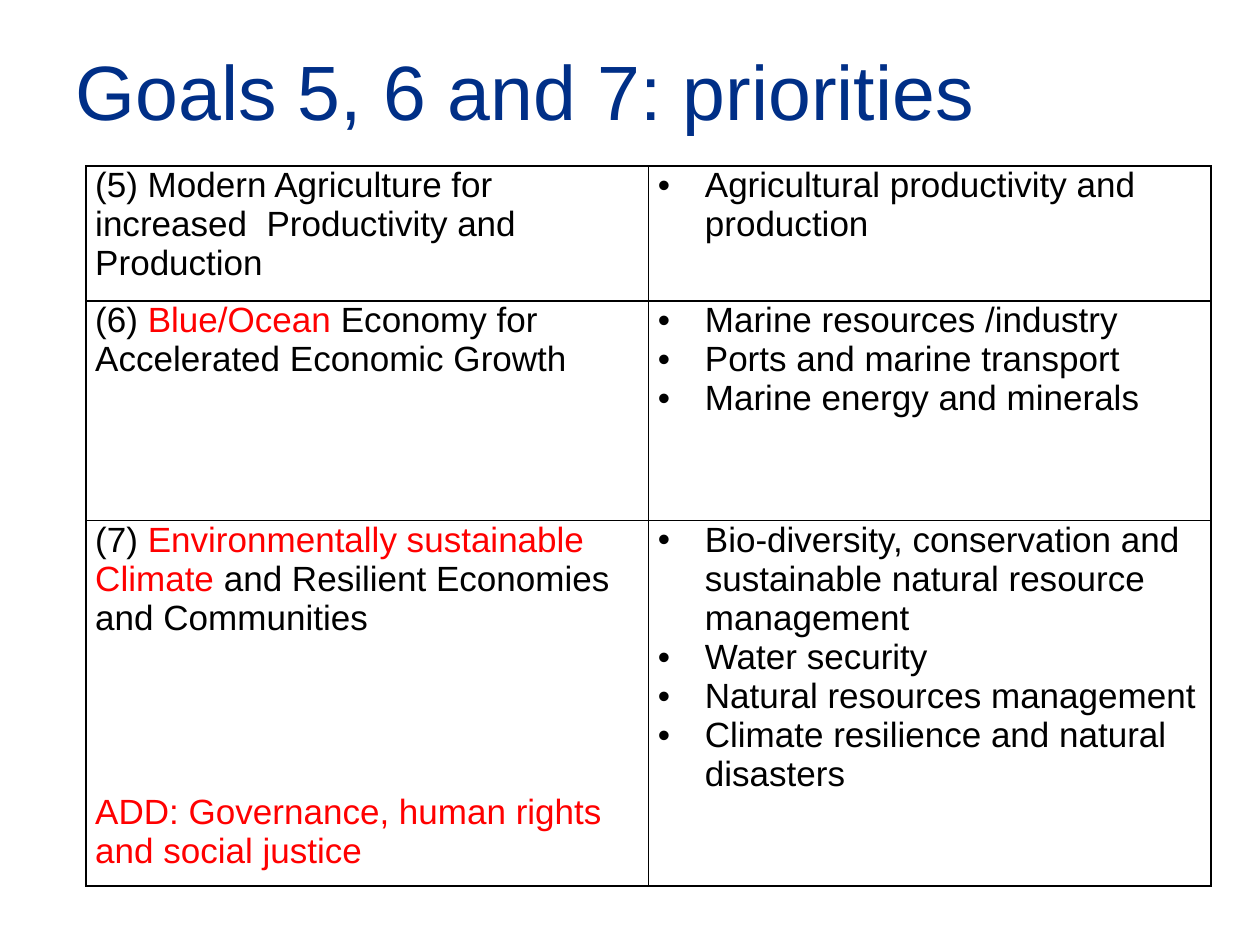
from dataclasses import dataclass

from lxml import etree
from pptx import Presentation
from pptx.dml.color import RGBColor
from pptx.enum.text import MSO_ANCHOR, PP_ALIGN
from pptx.oxml.ns import qn
from pptx.table import _Cell
from pptx.util import Cm, Pt

LEFT = PP_ALIGN.LEFT
MIDDLE = MSO_ANCHOR.MIDDLE
TOP = MSO_ANCHOR.TOP
TITLE_ONLY = 5

COLORS = {"title": "002F87", "text": "000000", "mark": "FF0000", "line": "000000"}
TITLE_BOX = {"left": Cm(1.27), "top": Cm(0.28), "width": Cm(22.86), "height": Cm(3.07)}
CELL = {"margin_left": Cm(0.19), "margin_right": Cm(0.19),
        "margin_top": 0, "margin_bottom": 0, "vertical_anchor": TOP}
INDENT = Cm(0.95)
COL_WIDTH = Cm(11.34)


@dataclass
class Run:
    text: str
    color: str = "text"


@dataclass
class Para:
    runs: list[Run]
    before: float = 0
    bullet: bool = False


@dataclass
class Goal:
    height: float
    paras: list[Para]
    points: list[str]


GOALS = [
    Goal(2.72,
         [Para([Run("(5) Modern Agriculture for increased  Productivity and Production")])],
         ["Agricultural productivity and production"]),
    Goal(4.42,
         [Para([Run("(6) "), Run("Blue/Ocean ", "mark"),
                Run("Economy for Accelerated Economic Growth")])],
         ["Marine resources /industry", "Ports and marine transport",
          "Marine energy and minerals"]),
    Goal(7.37,
         [Para([Run("(7) "), Run("Environmentally sustainable Climate ", "mark"),
                Run("and Resilient Economies and Communities")]),
          Para([Run("ADD: Governance, human rights and social justice", "mark")], before=89)],
         ["Bio-diversity, conservation and sustainable natural resource management",
          "Water security", "Natural resources management",
          "Climate resilience and natural disasters"]),
]


def apply(target: object, values: dict) -> None:
    for name, value in values.items():
        setattr(target, name, value)


def add_run(para, run: Run, size: float) -> None:
    part = para.add_run()
    part.text = run.text
    apply(part.font, {"name": "Arial", "size": Pt(size), "bold": False})
    part.font.color.rgb = RGBColor.from_string(COLORS[run.color])


def add_bullet(para) -> None:
    props = para._p.get_or_add_pPr()
    props.set("marL", str(INDENT))
    props.set("indent", str(-INDENT))
    etree.SubElement(props, qn("a:buFont")).set("typeface", "Arial")
    etree.SubElement(props, qn("a:buChar")).set("char", "•")


def add_border(cell: _Cell) -> None:
    props = cell._tc.get_or_add_tcPr()
    for i, side in enumerate(("lnL", "lnR", "lnT", "lnB")):
        line = etree.Element(qn(f"a:{side}"), w=str(Pt(1)))
        fill = etree.SubElement(line, qn("a:solidFill"))
        etree.SubElement(fill, qn("a:srgbClr")).set("val", COLORS["line"])
        props.insert(i, line)


def fill_cell(cell: _Cell, paras: list[Para]) -> None:
    apply(cell, CELL)
    cell.fill.background()
    add_border(cell)
    frame = cell.text_frame
    for i, item in enumerate(paras):
        para = frame.add_paragraph() if i else frame.paragraphs[0]
        apply(para, {"alignment": LEFT, "space_before": Pt(item.before)})
        if item.bullet:
            add_bullet(para)
        for run in item.runs:
            add_run(para, run, 20)


def main() -> None:
    deck = Presentation()
    apply(deck, {"slide_width": Cm(25.4), "slide_height": Cm(19.05)})
    slide = deck.slides.add_slide(deck.slide_layouts[TITLE_ONLY])

    # Title
    title = slide.shapes.title
    apply(title, TITLE_BOX)
    title.text_frame.vertical_anchor = MIDDLE
    head = title.text_frame.paragraphs[0]
    head.alignment = LEFT
    add_run(head, Run("Goals 5, 6 and 7: priorities", "title"), 44)

    # Table of goals and their points
    total = sum(goal.height for goal in GOALS)
    table = slide.shapes.add_table(len(GOALS), 2, Cm(1.73), Cm(3.35),
                                   2 * COL_WIDTH, Cm(total)).table
    apply(table, {"first_row": False, "horz_banding": False})
    for col in table.columns:
        col.width = COL_WIDTH
    for i, goal in enumerate(GOALS):
        table.rows[i].height = Cm(goal.height)
        fill_cell(table.cell(i, 0), goal.paras)
        fill_cell(table.cell(i, 1), [Para([Run(text)], bullet=True) for text in goal.points])

    deck.save("out.pptx")


if __name__ == "__main__":
    main()
